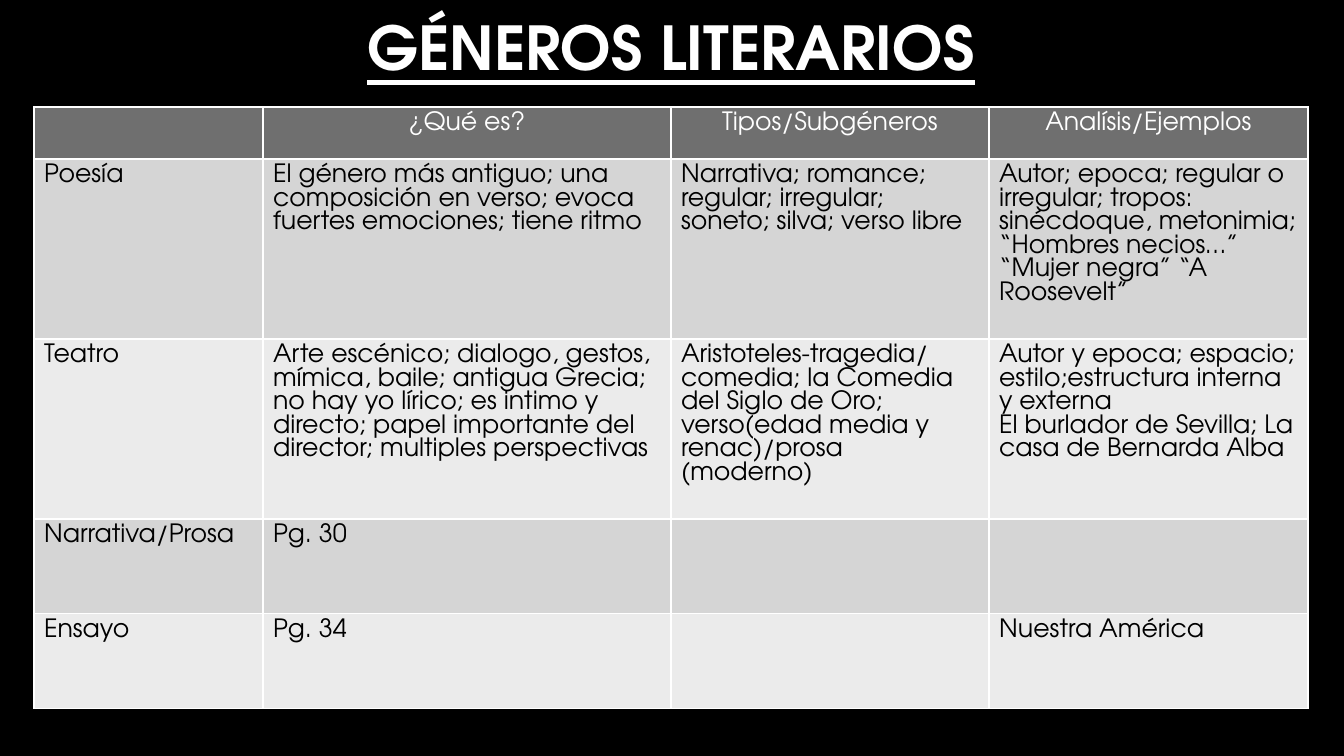
from dataclasses import dataclass

from lxml import etree
from pptx import Presentation
from pptx import util as u
from pptx.dml.color import RGBColor
from pptx.enum import text
from pptx.oxml import ns


@dataclass(frozen=True)
class Theme:
    background: str = "000000"
    light: str = "FFFFFF"
    dark: str = "000000"
    header: str = "6F6F6F"
    bands: tuple = ("D5D5D5", "EBEBEB")
    font: str = "TeX Gyre Adventor"
    title_size: float = 43.2
    table_size: float = 18
    border: float = 1


HEADINGS = ["", "¿Qué es?", "Tipos/Subgéneros", "Analísis/Ejemplos"]
GENRES = [
    ["Poesía",
     "El género más antiguo; una composición en verso; evoca fuertes emociones; tiene ritmo",
     "Narrativa; romance; regular; irregular; soneto; silva; verso libre",
     "Autor; epoca; regular o irregular; tropos: sinécdoque, metonimia; "
     "“Hombres necios…” “Mujer negra” “A Roosevelt”"],
    ["Teatro",
     "Arte escénico; dialogo, gestos, mímica, baile; antigua Grecia; no hay yo lírico; "
     "es intimo y directo; papel importante del director; multiples perspectivas",
     "Aristoteles-tragedia/comedia; la Comedia del Siglo de Oro; "
     "verso(edad media y renac)/prosa (moderno)",
     "Autor y epoca; espacio; estilo;estructura interna y externa\n"
     "El burlador de Sevilla; La casa de Bernarda Alba"],
    ["Narrativa/Prosa", "Pg. 30", "", ""],
    ["Ensayo", "Pg. 34", "", "Nuestra América"],
]
COLUMN_WIDTHS = [229, 408, 318, 319]
ROW_HEIGHTS = [52, 180, 180, 95, 95]


def px(length):
    """Turn whole pixels into EMU."""
    return u.Emu(round(length * 914400 / 100.8))


class SlideBuilder:
    """Draw styled elements on the current slide."""

    def __init__(self, presentation, theme):
        self.theme = theme
        self.slide = presentation.slides.add_slide(presentation.slide_layouts[5])
        fill = self.slide.background.fill
        fill.solid()
        fill.fore_color.rgb = RGBColor.from_string(theme.background)

    def format_text(self, frame, size, color, alignment):
        """Style every paragraph and run of a text frame."""
        for paragraph in frame.paragraphs:
            paragraph.alignment = alignment
            for run in paragraph.runs:
                run.font.name = self.theme.font
                run.font.size = u.Pt(size)
                run.font.color.rgb = RGBColor.from_string(color)

    def title(self, wording, left, top, width, height):
        """Place and format the title placeholder."""
        shape = self.slide.shapes.title
        shape.left, shape.top, shape.width, shape.height = map(px, (left, top, width, height))
        frame = shape.text_frame
        frame.text = wording
        frame.auto_size = text.MSO_AUTO_SIZE.NONE
        frame.vertical_anchor = text.MSO_ANCHOR.BOTTOM
        self.format_text(frame, self.theme.title_size, self.theme.light, text.PP_ALIGN.CENTER)
        font = frame.paragraphs[0].runs[0].font
        font.bold = font.underline = True

    def cell_borders(self, cell):
        """Outline a cell on all four sides."""
        properties = cell._tc.get_or_add_tcPr()
        for position, side in enumerate(("a:lnL", "a:lnR", "a:lnT", "a:lnB")):
            line = etree.Element(ns.qn(side), w=str(u.Pt(self.theme.border)))
            fill = etree.SubElement(line, ns.qn("a:solidFill"))
            etree.SubElement(fill, ns.qn("a:srgbClr"), val=self.theme.light)
            properties.insert(position, line)

    def cell(self, cell, wording, fill, color, alignment):
        """Fill, outline and label one table cell."""
        cell.fill.solid()
        cell.fill.fore_color.rgb = RGBColor.from_string(fill)
        self.cell_borders(cell)
        cell.text_frame.text = wording
        self.format_text(cell.text_frame, self.theme.table_size, color, alignment)

    def table(self, rows, left, top, widths, heights):
        """Add a table with a header and alternating bands."""
        table = self.slide.shapes.add_table(
            len(rows), len(widths), px(left), px(top), px(sum(widths)), px(sum(heights))).table
        for column, width in zip(table.columns, widths):
            column.width = px(width)
        for index, (row, height, wordings) in enumerate(zip(table.rows, heights, rows)):
            row.height = px(height)
            if index == 0:
                style = self.theme.header, self.theme.light, text.PP_ALIGN.CENTER
            else:
                style = self.theme.bands[(index - 1) % 2], self.theme.dark, text.PP_ALIGN.LEFT
            for cell, wording in zip(row.cells, wordings):
                self.cell(cell, wording, *style)


def main():
    """Build and save the slide."""
    presentation = Presentation()
    presentation.slide_width, presentation.slide_height = px(1344), px(756)
    builder = SlideBuilder(presentation, Theme())
    builder.title("GÉNEROS LITERARIOS", 107, 39, 1128, 49)
    builder.table([HEADINGS] + GENRES, 34, 107, COLUMN_WIDTHS, ROW_HEIGHTS)
    presentation.save("out.pptx")


if __name__ == "__main__":
    main()
